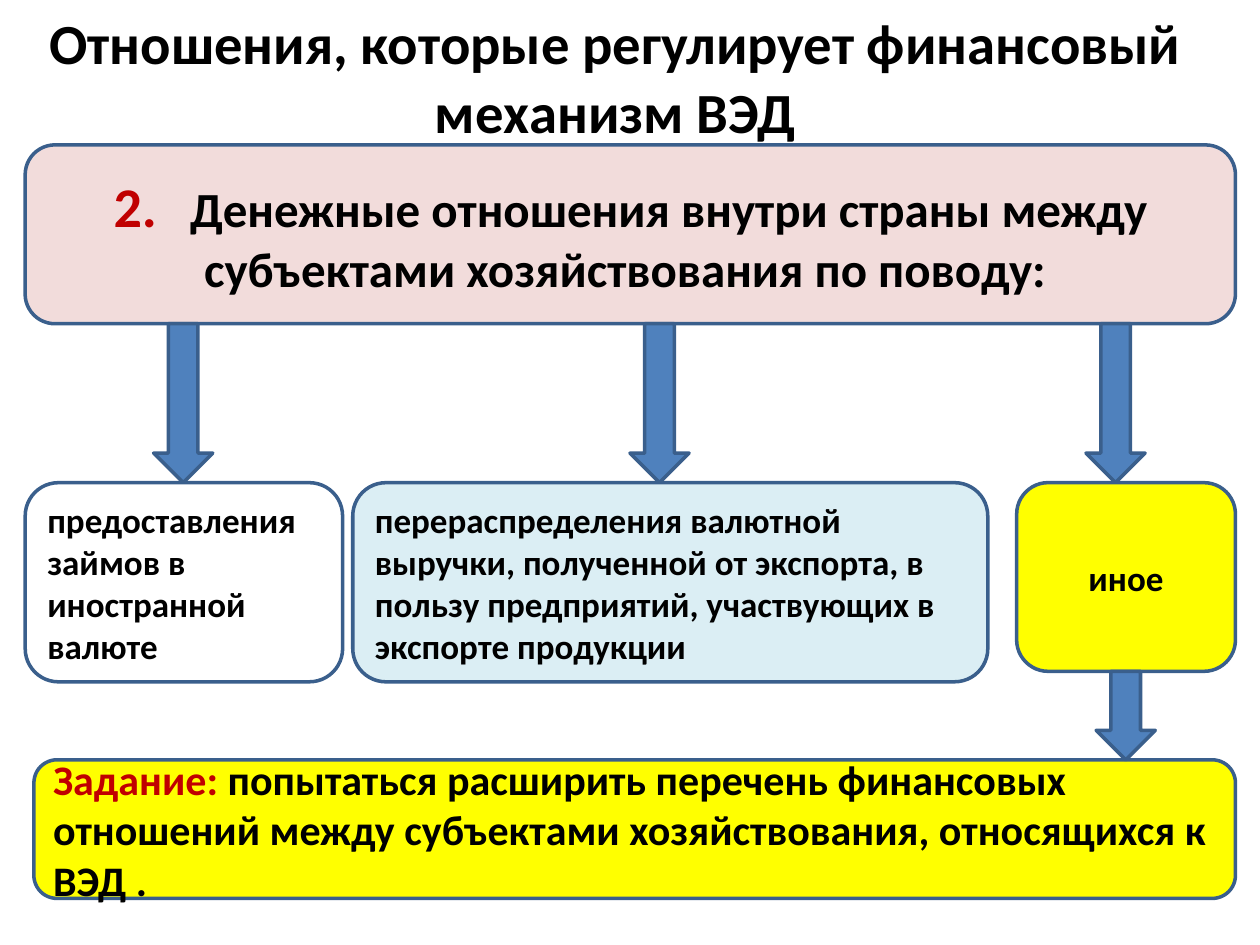
"""Build a slide on the monetary relations governed by the financial mechanism."""
from dataclasses import dataclass
from typing import Optional

from pptx import Presentation
from pptx.dml.color import RGBColor
from pptx.enum.shapes import MSO_SHAPE
from pptx.enum.text import MSO_ANCHOR, PP_ALIGN
from pptx.util import Pt

BLACK = RGBColor(0x00, 0x00, 0x00)
WHITE = RGBColor(0xFF, 0xFF, 0xFF)
RED = RGBColor(0xC0, 0x00, 0x00)
PINK = RGBColor(0xF2, 0xDC, 0xDB)
YELLOW = RGBColor(0xFF, 0xFF, 0x00)
PALE_BLUE = RGBColor(0xDB, 0xEE, 0xF4)
BLUE = RGBColor(0x4F, 0x81, 0xBD)
OUTLINE = RGBColor(0x3A, 0x5F, 0x8C)

LEFT, RIGHT = 14.4, 706
HEADER_TOP, HEADER_BOTTOM = 82.8, 185
ITEM_TOP, OTHER_BOTTOM = 275.8, 383.6
TASK_LEFT, TASK_TOP = 19.4, 434.2
ARROW_WIDTH = 33.8


@dataclass(frozen=True)
class Box:
    left: float
    top: float
    width: float
    height: float


@dataclass(frozen=True)
class Item:
    text: str
    box: Box
    fill: RGBColor
    align: PP_ALIGN = PP_ALIGN.LEFT


@dataclass(frozen=True)
class Arrow:
    left: float
    top: float
    bottom: float


ITEMS = (
    Item("предоставления займов в иностранной валюте",
         Box(LEFT, ITEM_TOP, 181.4, 113.8), WHITE),
    Item("перераспределения валютной выручки, полученной от экспорта, "
         "в пользу предприятий, участвующих в экспорте продукции",
         Box(201.6, ITEM_TOP, 362.9, 113.8), PALE_BLUE),
    Item("иное", Box(581, ITEM_TOP, RIGHT - 581, OTHER_BOTTOM - ITEM_TOP),
         YELLOW, PP_ALIGN.CENTER),
)
ARROWS = (
    *(Arrow(left, HEADER_BOTTOM, ITEM_TOP) for left in (87.8, 360, 620.6)),
    Arrow(626.4, OTHER_BOTTOM, TASK_TOP),
)


def add_text(shape, text: str, *, size: float, color: RGBColor = BLACK,
             align: PP_ALIGN = PP_ALIGN.LEFT, spacing: Optional[float] = None) -> None:
    """Append a bold run to the first paragraph of a shape."""
    frame = shape.text_frame
    frame.word_wrap = True
    frame.vertical_anchor = MSO_ANCHOR.MIDDLE
    paragraph = frame.paragraphs[0]
    paragraph.alignment = align
    run = paragraph.add_run()
    run.text = text
    run.font.name = "Calibri"
    run.font.size = Pt(size)
    run.font.bold = True
    run.font.color.rgb = color
    if spacing is not None:
        run.font._element.set("spc", str(round(spacing * 100)))


def add_figure(slide, kind: MSO_SHAPE, box: Box, fill: RGBColor):
    """Add a filled, outlined shape without a shadow."""
    shape = slide.shapes.add_shape(
        kind, Pt(box.left), Pt(box.top), Pt(box.width), Pt(box.height))
    shape.shadow.inherit = False
    shape.fill.solid()
    shape.fill.fore_color.rgb = fill
    shape.line.color.rgb = OUTLINE
    shape.line.width = Pt(2)
    return shape


def add_header(slide) -> None:
    """Add the title and the numbered header panel."""
    title = slide.shapes.add_textbox(Pt(19.4), Pt(9.4), Pt(664.6), Pt(68.4))
    add_text(title, "Отношения, которые регулирует финансовый механизм ВЭД",
             size=32.4, align=PP_ALIGN.CENTER)
    header = add_figure(
        slide, MSO_SHAPE.ROUNDED_RECTANGLE,
        Box(LEFT, HEADER_TOP, RIGHT - LEFT, HEADER_BOTTOM - HEADER_TOP), PINK)
    add_text(header, "2.", size=32, color=RED, align=PP_ALIGN.CENTER)
    add_text(header, " ", size=28, align=PP_ALIGN.CENTER, spacing=12.7)
    add_text(header, "Денежные отношения внутри страны между субъектами "
             "хозяйствования по поводу: ", size=28, align=PP_ALIGN.CENTER)


def add_task(slide) -> None:
    """Add the assignment panel at the bottom."""
    task = add_figure(slide, MSO_SHAPE.ROUNDED_RECTANGLE,
                      Box(TASK_LEFT, TASK_TOP, RIGHT - TASK_LEFT, 79.2), YELLOW)
    add_text(task, "Задание:", size=24, color=RED)
    add_text(task, " попытаться расширить перечень финансовых отношений между "
             "субъектами хозяйствования, относящихся к ВЭД .", size=24)


def main() -> None:
    """Build and save the presentation."""
    presentation = Presentation()
    presentation.slide_width, presentation.slide_height = Pt(720), Pt(540)
    slide = presentation.slides.add_slide(presentation.slide_layouts[6])
    add_header(slide)
    add_task(slide)
    for item in ITEMS:
        shape = add_figure(slide, MSO_SHAPE.ROUNDED_RECTANGLE, item.box, item.fill)
        add_text(shape, item.text, size=20, align=item.align)
    for arrow in ARROWS:
        box = Box(arrow.left, arrow.top, ARROW_WIDTH, arrow.bottom - arrow.top)
        add_figure(slide, MSO_SHAPE.DOWN_ARROW, box, BLUE)
    presentation.save("out.pptx")


if __name__ == "__main__":
    main()
